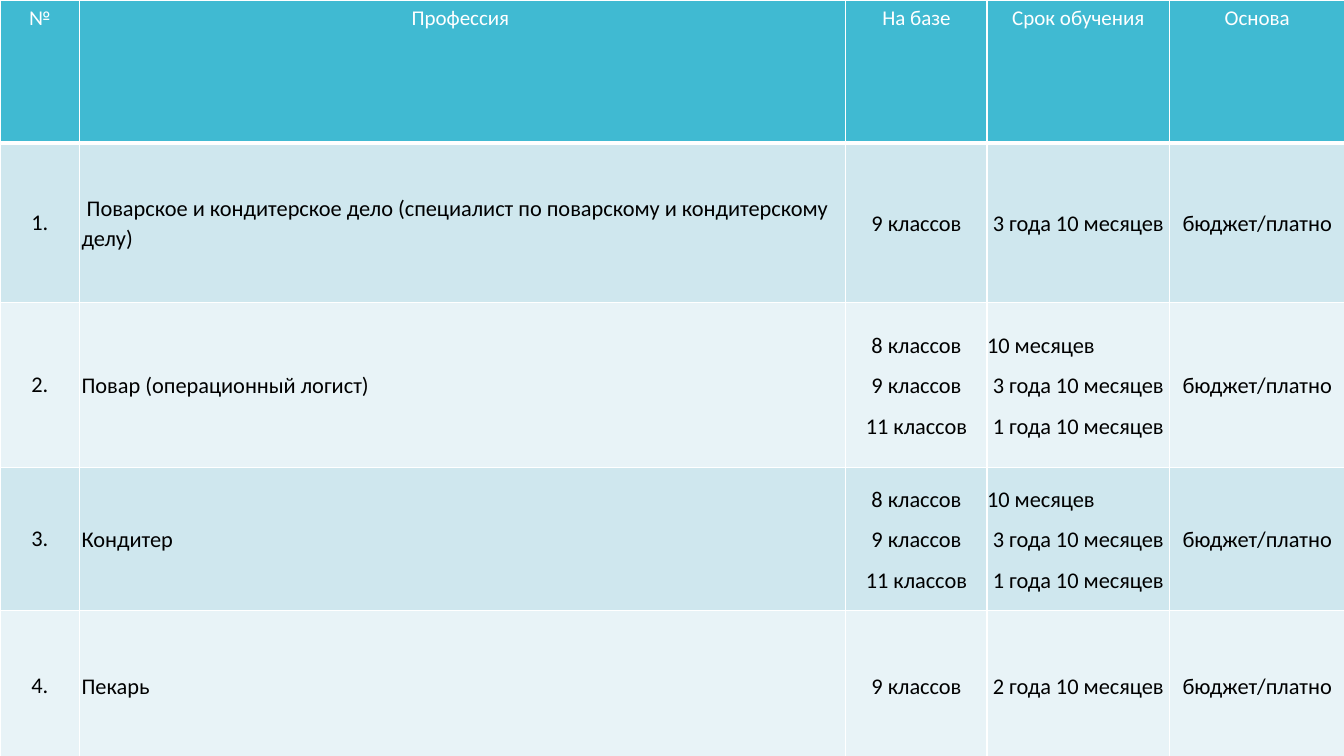
from lxml.etree import SubElement
from pptx import Presentation
from pptx.dml.color import RGBColor
from pptx.enum.text import MSO_ANCHOR, PP_ALIGN
from pptx.oxml.ns import qn
from pptx.util import Inches, Pt

WHITE = RGBColor(0xFF, 0xFF, 0xFF)
BLACK = RGBColor(0x00, 0x00, 0x00)
HEADER_TEAL = RGBColor(0x40, 0xBA, 0xD2)
ROW_FILLS = (RGBColor(0xCF, 0xE7, 0xEE), RGBColor(0xE8, 0xF3, 0xF7))

COLUMN_WIDTHS = (0.79, 7.6, 1.4, 1.81, 1.74)
ROW_HEIGHTS = (1.42, 1.58, 1.64, 1.42, 1.49)
INSETS = (None, 0.02, 0, 0, 0)
HEADINGS = ("№", "Профессия ", "На базе", "Срок обучения", "Основа")
FUNDING = "бюджет/платно"
SCHOOL_LEVELS = "8 классов\n9 классов\n11 классов"
COURSE_TERMS = "10 месяцев\n3 года 10 месяцев\n1 года 10 месяцев"
PROFESSIONS = (
    (" Поварское и кондитерское дело (специалист по поварскому и кондитерскому делу)",
     "9 классов", "3 года 10 месяцев"),
    ("Повар (операционный логист)", SCHOOL_LEVELS, COURSE_TERMS),
    ("Кондитер", SCHOOL_LEVELS, COURSE_TERMS),
    ("Пекарь", "9 классов", "2 года 10 месяцев"),
)


class ProfessionSlide:
    """Holds the text style and the slide, and draws the table of professions."""

    font_name = "Calibri"

    def __init__(self, slide):
        self.slide = slide

    def border(self, cell, bottom):
        properties = cell._tc.get_or_add_tcPr()
        for side, width in (("L", 1), ("R", 1), ("T", 1), ("B", bottom)):
            line = SubElement(properties, qn(f"a:ln{side}"), w=str(Pt(width)))
            SubElement(SubElement(line, qn("a:solidFill")), qn("a:srgbClr"), val=str(WHITE))

    def cell(self, cell, text, fill, size, color, bottom=1):
        self.border(cell, bottom)
        cell.fill.solid()
        cell.fill.fore_color.rgb = fill
        cell.text = text
        for paragraph in cell.text_frame.paragraphs:
            paragraph.alignment = PP_ALIGN.CENTER
            paragraph.font.name = self.font_name
            paragraph.font.size = Pt(size)
            paragraph.font.bold = False
            paragraph.font.color.rgb = color

    def heading(self, cell, text):
        self.cell(cell, text, HEADER_TEAL, 15, WHITE, bottom=3)

    def entry(self, cell, text, fill, inset):
        self.cell(cell, text, fill, 16, BLACK)
        cell.vertical_anchor = MSO_ANCHOR.MIDDLE
        if inset is None:
            return
        cell.margin_left = cell.margin_right = Inches(inset)
        cell.margin_top = cell.margin_bottom = Inches(inset)
        for paragraph in cell.text_frame.paragraphs:
            paragraph.line_spacing = 1.07
            paragraph.space_after = Pt(8)
            if inset or paragraph.text == "10 месяцев":
                paragraph.alignment = PP_ALIGN.LEFT

    def table(self):
        table = self.slide.shapes.add_table(
            len(ROW_HEIGHTS), len(COLUMN_WIDTHS), 0, 0,
            Inches(sum(COLUMN_WIDTHS)), Inches(sum(ROW_HEIGHTS))).table
        for column, width in zip(table.columns, COLUMN_WIDTHS):
            column.width = Inches(width)
        for row, height in zip(table.rows, ROW_HEIGHTS):
            row.height = Inches(height)
        for column, heading in enumerate(HEADINGS):
            self.heading(table.cell(0, column), heading)
        for number, profession in enumerate(PROFESSIONS, 1):
            fill = ROW_FILLS[(number - 1) % 2]
            entries = (f"{number}.", *profession, FUNDING)
            for column, (text, inset) in enumerate(zip(entries, INSETS)):
                self.entry(table.cell(number, column), text, fill, inset)


def main():
    presentation = Presentation()
    presentation.slide_width = Inches(13.33)
    presentation.slide_height = Inches(7.5)
    blank_layout = presentation.slide_layouts[6]
    ProfessionSlide(presentation.slides.add_slide(blank_layout)).table()
    presentation.save("out.pptx")


if __name__ == "__main__":
    main()
